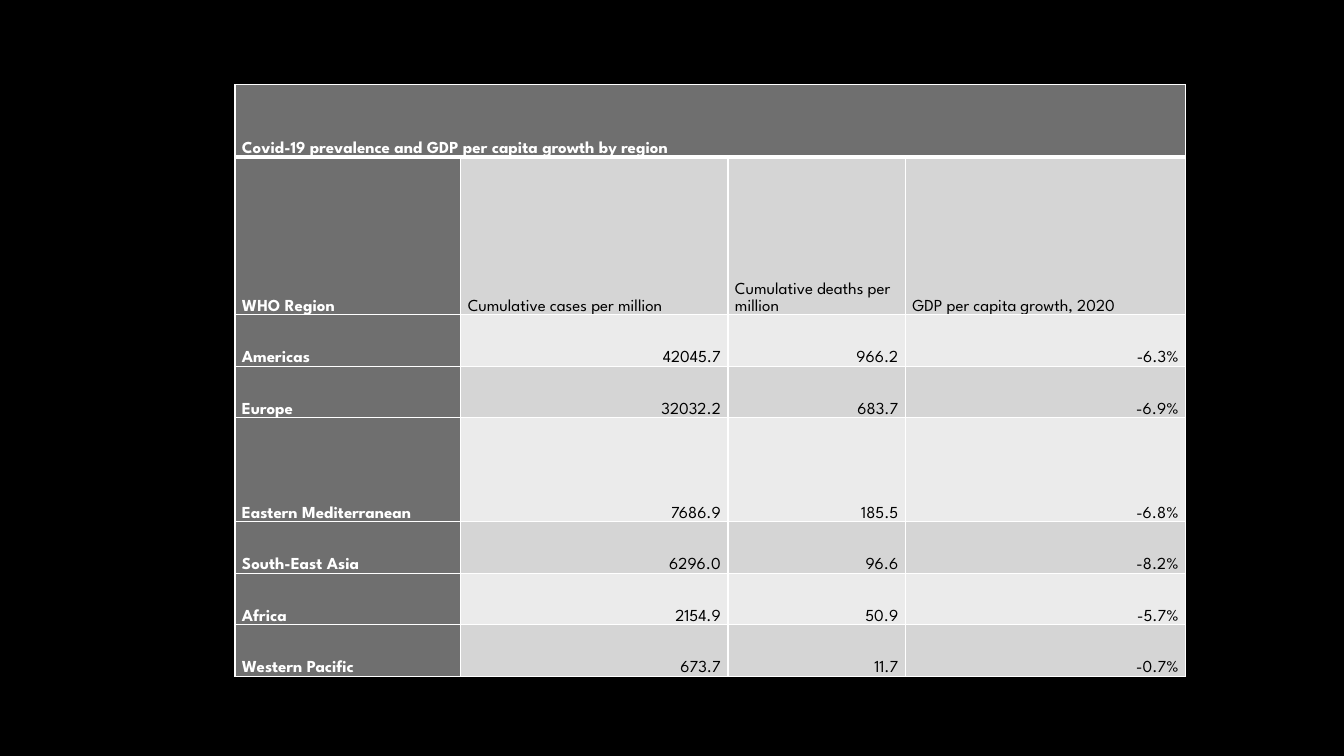
from dataclasses import dataclass

from lxml import etree
from pptx import Presentation
from pptx.dml.color import RGBColor
from pptx.enum.text import MSO_ANCHOR, PP_ALIGN
from pptx.oxml.ns import qn
from pptx.util import Inches, Pt

BOTTOM = MSO_ANCHOR.BOTTOM
LEFT, RIGHT = PP_ALIGN.LEFT, PP_ALIGN.RIGHT


@dataclass(frozen=True)
class Theme:
    """Colours, font and sizes of the slide."""
    background: str = "000000"
    header: str = "6F6F6F"
    header_text: str = "FFFFFF"
    body_text: str = "000000"
    bands: tuple = ("EBEBEB", "D5D5D5")
    border: str = "FFFFFF"
    font: str = "League Spartan"
    size: float = 12
    spacing: float = 1.07
    thin: float = 1
    thick: float = 3


THEME = Theme()
TITLE = "Covid-19 prevalence and GDP per capita growth by region"
ROWS = [
    (TITLE, "", "", ""),
    ("WHO Region", "Cumulative cases per million",
     "Cumulative deaths per million", "GDP per capita growth, 2020"),
    ("Americas", "42045.7", "966.2", "-6.3%"),
    ("Europe", "32032.2", "683.7", "-6.9%"),
    ("Eastern Mediterranean", "7686.9", "185.5", "-6.8%"),
    ("South-East Asia", "6296.0", "96.6", "-8.2%"),
    ("Africa", "2154.9", "50.9", "-5.7%"),
    ("Western Pacific", "673.7", "11.7", "-0.7%"),
]
COL_WIDTHS = (2.24, 2.65, 1.76, 2.78)
ROW_HEIGHTS = (0.72, 1.56, 0.51, 0.51, 1.03, 0.51, 0.51, 0.51)


def set_border(cell, side, width):
    """Draw one side of a cell: L, R, T or B."""
    tcPr = cell._tc.get_or_add_tcPr()
    ln = etree.SubElement(tcPr, qn(f"a:ln{side}"), w=str(Pt(width)))
    fill = etree.SubElement(ln, qn("a:solidFill"))
    etree.SubElement(fill, qn("a:srgbClr"), val=THEME.border)


def style_cell(cell, row, col):
    """Format a cell by its place in the table."""
    is_header = row == 0 or col == 0
    for side in "LRTB":
        under_title = (row, side) in ((0, "B"), (1, "T"))
        set_border(cell, side, THEME.thick if under_title else THEME.thin)
    color = THEME.header if is_header else THEME.bands[row % 2]
    cell.fill.solid()
    cell.fill.fore_color.rgb = RGBColor.from_string(color)
    cell.vertical_anchor = BOTTOM
    cell.margin_left = cell.margin_right = Inches(0.07)
    cell.margin_top = cell.margin_bottom = 0

    p = cell.text_frame.paragraphs[0]
    p.alignment = RIGHT if row > 1 and col > 0 else LEFT
    p.line_spacing = THEME.spacing
    for r in p.runs:
        r.font.name = THEME.font
        r.font.size = Pt(THEME.size)
        r.font.bold = is_header
        r.font.color.rgb = RGBColor.from_string(
            THEME.header_text if is_header else THEME.body_text)


def add_region_table(slide, left, top, width, height):
    """Place the table of regions in the given box."""
    frame = slide.shapes.add_table(
        len(ROWS), len(COL_WIDTHS), Inches(left), Inches(top),
        Inches(width), Inches(height))
    table = frame.table
    for column, share in zip(table.columns, COL_WIDTHS):
        column.width = Inches(width * share / sum(COL_WIDTHS))
    for row, share in zip(table.rows, ROW_HEIGHTS):
        row.height = Inches(height * share / sum(ROW_HEIGHTS))
    for i, values in enumerate(ROWS):
        for j, value in enumerate(values):
            cell = table.cell(i, j)
            cell.text_frame.text = value
            style_cell(cell, i, j)
    table.cell(0, 0).merge(table.cell(0, len(COL_WIDTHS) - 1))


def main():
    """Build and save the presentation."""
    prs = Presentation()
    prs.slide_width, prs.slide_height = Inches(13.33), Inches(7.5)
    slide = prs.slides.add_slide(prs.slide_layouts[6])
    slide.background.fill.solid()
    slide.background.fill.fore_color.rgb = RGBColor.from_string(THEME.background)
    add_region_table(slide, 2.33, 0.84, 9.43, 5.87)
    prs.save("out.pptx")


if __name__ == "__main__":
    main()
